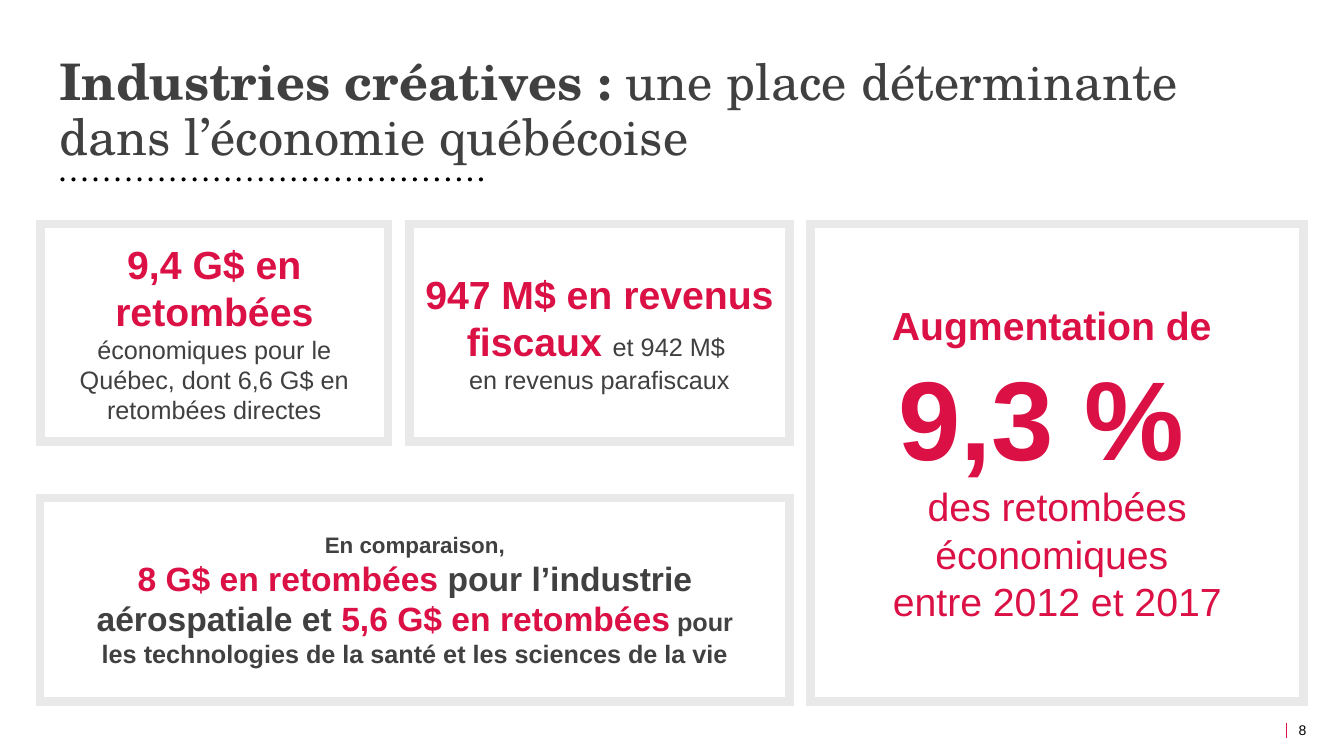
from dataclasses import dataclass

from lxml.etree import SubElement
from pptx import Presentation
from pptx.dml.color import RGBColor
from pptx.enum.shapes import MSO_CONNECTOR, MSO_SHAPE
from pptx.enum.text import MSO_ANCHOR, PP_ALIGN
from pptx.oxml.ns import qn
from pptx.util import Inches, Pt


@dataclass(frozen=True)
class Theme:
    red: str = "DB1045"
    dark: str = "404040"
    gray: str = "424243"
    black: str = "000000"
    frame: str = "E9E9E9"
    heading_font: str = "TeX Gyre Schola"
    body_font: str = "Arial"
    page: int = 10
    note: int = 16
    body: int = 18
    lead: int = 24
    figure: int = 28
    title: int = 36
    hero: int = 80


class SlideBuilder:
    def __init__(self, slide, theme):
        self.slide = slide
        self.theme = theme

    def add_run(self, paragraph, text, size, color, bold=False, font=None):
        run = paragraph.add_run()
        run.text = text
        run.font.name = font or self.theme.body_font
        run.font.size = Pt(size)
        run.font.bold = bold
        run.font.color.rgb = RGBColor.from_string(color)

    def prepare_frame(self, shape, anchor, margin=None, wrap=True):
        frame = shape.text_frame
        frame.word_wrap = wrap
        frame.vertical_anchor = anchor
        if margin is not None:
            frame.margin_left = frame.margin_right = Inches(margin)
            frame.margin_top = frame.margin_bottom = Inches(margin)
        return frame

    def title(self, left, top, width, height, runs):
        shape = self.slide.shapes.title
        shape.left, shape.top = Inches(left), Inches(top)
        shape.width, shape.height = Inches(width), Inches(height)
        paragraph = self.prepare_frame(shape, MSO_ANCHOR.BOTTOM, 0).paragraphs[0]
        paragraph.alignment = PP_ALIGN.LEFT
        paragraph.line_spacing = 0.9
        for text, bold in runs:
            self.add_run(paragraph, text, self.theme.title, self.theme.dark,
                         bold, self.theme.heading_font)

    def dotted_rule(self, first, last, top, count, diameter):
        pitch = (last - first) / (count - 1)
        for index in range(count):
            dot = self.slide.shapes.add_shape(
                MSO_SHAPE.OVAL, Inches(first + index * pitch), Inches(top),
                Inches(diameter), Inches(diameter))
            dot.shadow.inherit = False
            dot.fill.solid()
            dot.fill.fore_color.rgb = RGBColor.from_string(self.theme.black)
            dot.line.fill.background()

    def card(self, left, top, width, height, paragraphs):
        """Add a framed box; each paragraph is a list of (text, size, color, bold)."""
        shape = self.slide.shapes.add_shape(
            MSO_SHAPE.RECTANGLE, Inches(left), Inches(top), Inches(width), Inches(height))
        shape.shadow.inherit = False
        shape.fill.background()
        shape.line.color.rgb = RGBColor.from_string(self.theme.frame)
        shape.line.width = Pt(6)
        outline = shape.line._get_or_add_ln()
        SubElement(outline, qn("a:miter"), lim="800000")
        frame = self.prepare_frame(shape, MSO_ANCHOR.MIDDLE)
        for index, runs in enumerate(paragraphs):
            paragraph = frame.add_paragraph() if index else frame.paragraphs[0]
            paragraph.alignment = PP_ALIGN.CENTER
            for run in runs:
                self.add_run(paragraph, *run)

    def vertical_line(self, left, top, bottom):
        line = self.slide.shapes.add_connector(
            MSO_CONNECTOR.STRAIGHT, Inches(left), Inches(top), Inches(left), Inches(bottom))
        line.line.color.rgb = RGBColor.from_string(self.theme.red)
        line.line.width = Pt(0.5)
        SubElement(line._element.spPr, qn("a:effectLst"))

    def page_number(self, left, top, width, height, number):
        box = self.slide.shapes.add_textbox(
            Inches(left), Inches(top), Inches(width), Inches(height))
        frame = self.prepare_frame(box, MSO_ANCHOR.TOP, 0, wrap=False)
        self.add_run(frame.paragraphs[0], number, self.theme.page, self.theme.black)


def main():
    presentation = Presentation()
    presentation.slide_width = Inches(13.33)
    presentation.slide_height = Inches(7.5)
    theme = Theme()
    slide = presentation.slides.add_slide(presentation.slide_layouts[5])
    builder = SlideBuilder(slide, theme)

    builder.title(0.59, 0.59, 12.15, 1.06, [
        ("Industries créatives : ", True),
        ("une place déterminante dans l’économie québécoise", False),
    ])
    builder.dotted_rule(first=0.6, last=4.75, top=1.76, count=39, diameter=0.04)

    red, dark, gray = theme.red, theme.dark, theme.gray
    body, lead, figure = theme.body, theme.lead, theme.figure
    builder.card(0.4, 2.22, 3.45, 2.16, [
        [("9,4 G$ en retombées ", figure, red, True),
         ("économiques pour le Québec, dont 6,6 G$ en retombées directes", body, dark)],
    ])
    builder.card(4.06, 2.22, 3.77, 2.16, [
        [("947 M$ en revenus fiscaux ", figure, red, True),
         ("et 942 M$ ", body, dark)],
        [("en revenus parafiscaux", body, dark)],
    ])
    builder.card(8.04, 2.22, 4.89, 4.74, [
        [("Augmentation de ", figure, red, True)],
        [("9,3 % ", theme.hero, red, True)],
        [("des retombées économiques ", figure, red)],
        [("entre 2012 et 2017", figure, red)],
    ])
    builder.card(0.4, 4.94, 7.43, 2.02, [
        [("En comparaison,", theme.note, dark, True)],
        [("8 G$ en retombées ", lead, red, True),
         ("pour ", lead, gray, True),
         ("l’industrie aérospatiale et ", lead, dark, True),
         ("5,6 G$ en retombées", lead, red, True),
         (" ", body, red, True),
         ("pour", body, gray, True)],
        [("les technologies de la santé et les sciences de la vie", body, dark, True)],
    ])

    builder.vertical_line(12.76, 7.17, 7.32)
    builder.page_number(12.88, 7.16, 0.25, 0.17, "8")
    presentation.save("out.pptx")


if __name__ == "__main__":
    main()
